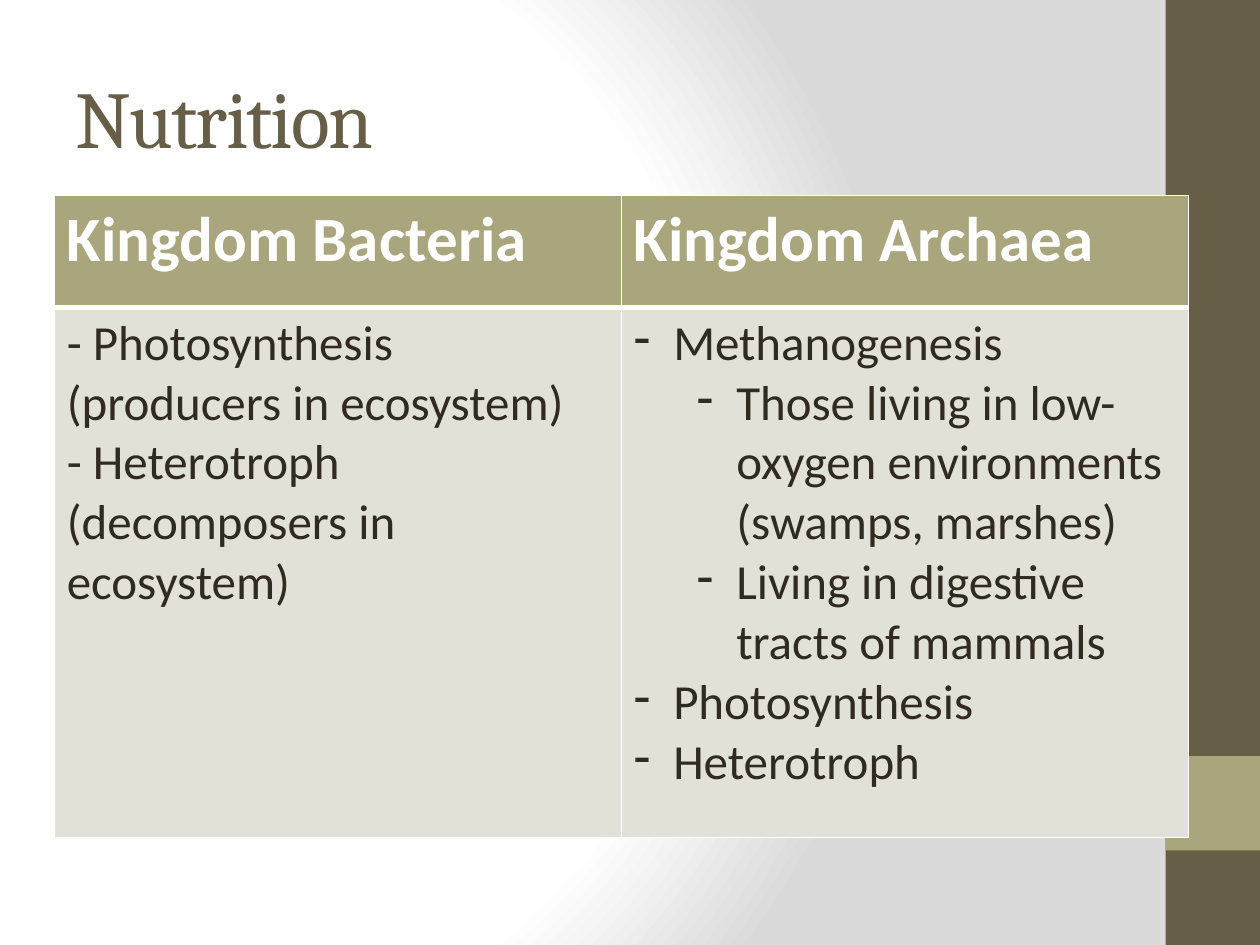
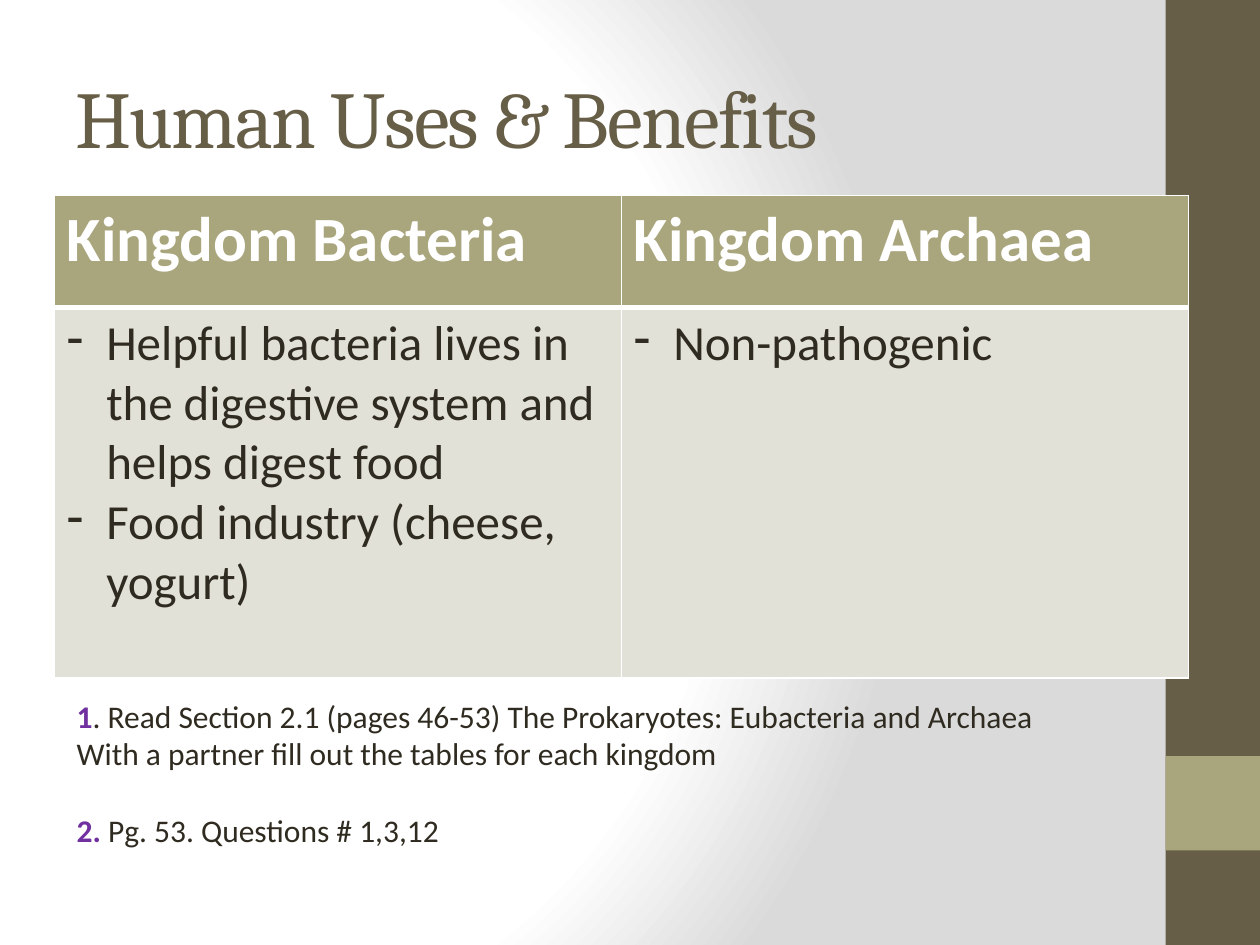
from dataclasses import dataclass

from lxml import etree
from pptx import Presentation
from pptx.dml.color import RGBColor
from pptx.enum.shapes import MSO_SHAPE
from pptx.enum.text import MSO_ANCHOR
from pptx.oxml import parse_xml
from pptx.oxml.ns import nsdecls, qn
from pptx.util import Pt

RECTANGLE = MSO_SHAPE.RECTANGLE
MIDDLE = MSO_ANCHOR.MIDDLE

KINGDOMS = ("Kingdom Bacteria", "Kingdom Archaea")

# Each table entry is (bullet level or None, text).
SLIDES = [
    {
        "title": "Nutrition",
        "body_height": 303,
        "columns": (
            [
                (None, "- Photosynthesis (producers in ecosystem)"),
                (None, "- Heterotroph (decomposers in ecosystem)"),
            ],
            [
                (0, "Methanogenesis"),
                (1, "Those living in low-oxygen environments (swamps, marshes)"),
                (1, "Living in digestive tracts of mammals"),
                (0, "Photosynthesis"),
                (0, "Heterotroph"),
            ],
        ),
        "tasks": [],
    },
    {
        "title": "Human Uses & Benefits",
        "body_height": 212,
        "columns": (
            [
                (0, "Helpful bacteria lives in the digestive system and helps digest food"),
                (0, "Food industry (cheese, yogurt)"),
            ],
            [(0, "Non-pathogenic")],
        ),
        # Each task line is (number, text, space before).
        "tasks": [
            ("1", ". Read Section 2.1 (pages 46-53) The Prokaryotes: Eubacteria and Archaea", 0),
            ("", "With a partner fill out the tables for each kingdom", 0),
            ("2. ", "Pg. 53. Questions # 1,3,12", 22),
        ],
    },
]


@dataclass(frozen=True)
class Theme:
    brown: str = "675E47"
    olive: str = "A9A57C"
    pale: str = "E2E1D7"
    ink: str = "2F2B20"
    white: str = "FFFFFF"
    grey: str = "DADADA"
    purple: str = "7030A0"
    heading_font: str = "Cambria"
    body_font: str = "Calibri"
    title_size: int = 46
    header_size: int = 36
    body_size: int = 28
    task_size: int = 18
    thin: int = 1
    thick: int = 3


THEME = Theme()
PAGE_WIDTH, PAGE_HEIGHT = 720, 540
BAND_WIDTH = 54
ACCENT_TOP = 432
TITLE_BOX = (36, 21.6, 600, 90)
TABLE_LEFT, TABLE_TOP, TABLE_WIDTH = 31, 111.6, 648
HEADER_HEIGHT = 64
TASK_BOX = (36.72, 394.56, 612, 94.32)
HANGING, LEVEL_STEP = 22.5, 36
NO_TABLE_STYLE = "{2D5ABB26-0587-4C30-8999-92F81FD0307C}"


def points(values):
    return [Pt(value) for value in values]


def style_font(font, name, size, color, bold=False):
    font.name, font.size, font.bold = name, Pt(size), bold
    font.color.rgb = RGBColor.from_string(color)


def paint_background(page):
    """Fill the page with a circular gradient, white turning grey at the right."""
    fill = page.background.fill
    fill.solid()
    stops = "".join(
        f'<a:gs pos="{percent * 1000}"><a:srgbClr val="{color}"/></a:gs>'
        for percent, color in ((0, THEME.white), (75, THEME.white), (100, THEME.grey))
    )
    gradient = parse_xml(
        f'<a:gradFill {nsdecls("a")} rotWithShape="1"><a:gsLst>{stops}</a:gsLst>'
        '<a:path path="circle"><a:fillToRect l="20000" t="50000" r="100000" b="50000"/>'
        "</a:path></a:gradFill>"
    )
    solid = page.background._cSld.find(".//" + qn("a:solidFill"))
    solid.getparent().replace(solid, gradient)


def add_band(page, top, height, color):
    left = PAGE_WIDTH - BAND_WIDTH
    band = page.shapes.add_shape(RECTANGLE, *points((left, top, BAND_WIDTH, height)))
    band.shadow.inherit = False
    band.fill.solid()
    band.fill.fore_color.rgb = RGBColor.from_string(color)
    band.line.fill.background()


def add_text_frame(page, place):
    frame = page.shapes.add_textbox(*points(place)).text_frame
    frame.word_wrap = True
    return frame


def add_title(page, title):
    frame = add_text_frame(page, TITLE_BOX)
    frame.vertical_anchor = MIDDLE
    para = frame.paragraphs[0]
    span = para.add_run()
    span.text = title
    span._r.get_or_add_rPr().set("spc", "-100")
    style_font(para.font, THEME.heading_font, THEME.title_size, THEME.brown)


def next_paragraph(frame, index):
    return frame.add_paragraph() if index else frame.paragraphs[0]


def add_dash(para, level):
    properties = para._p.get_or_add_pPr()
    properties.set("marL", str(Pt(HANGING + level * LEVEL_STEP)))
    properties.set("indent", str(-Pt(HANGING)))
    etree.SubElement(properties, qn("a:buFontTx"))
    etree.SubElement(properties, qn("a:buChar")).set("char", "-")


def set_borders(cell, top, bottom):
    properties = cell._tc.get_or_add_tcPr()
    widths = {"lnL": THEME.thin, "lnR": THEME.thin, "lnT": top, "lnB": bottom}
    for side, width in widths.items():
        properties.append(parse_xml(
            f'<a:{side} {nsdecls("a")} w="{Pt(width)}"><a:solidFill>'
            f'<a:srgbClr val="{THEME.white}"/></a:solidFill></a:{side}>'
        ))


def fill_cell(cell, entries, size, color, bold, fill):
    cell.fill.solid()
    cell.fill.fore_color.rgb = RGBColor.from_string(fill)
    for index, (level, text) in enumerate(entries):
        para = next_paragraph(cell.text_frame, index)
        para.text = text
        if level is not None:
            para.level = level
            add_dash(para, level)
        style_font(para.font, THEME.body_font, size, color, bold)


def add_kingdom_table(page, columns, body_height):
    heights = (HEADER_HEIGHT, body_height)
    place = points((TABLE_LEFT, TABLE_TOP, TABLE_WIDTH, sum(heights)))
    table = page.shapes.add_table(len(heights), len(KINGDOMS), *place).table
    table.horz_banding = False
    table._tbl.tblPr.find(qn("a:tableStyleId")).text = NO_TABLE_STYLE
    for row, height in zip(table.rows, heights):
        row.height = Pt(height)
    for number, (kingdom, entries) in enumerate(zip(KINGDOMS, columns)):
        table.columns[number].width = Pt(TABLE_WIDTH / len(KINGDOMS))
        header, body = table.cell(0, number), table.cell(1, number)
        set_borders(header, THEME.thin, THEME.thick)
        set_borders(body, THEME.thick, THEME.thin)
        fill_cell(header, [(None, kingdom)], THEME.header_size, THEME.white, True, THEME.olive)
        fill_cell(body, entries, THEME.body_size, THEME.ink, False, THEME.pale)


def add_tasks(page, tasks):
    frame = add_text_frame(page, TASK_BOX)
    for index, (number, text, space) in enumerate(tasks):
        para = next_paragraph(frame, index)
        if space:
            para.space_before = Pt(space)
        style_font(para.font, THEME.body_font, THEME.task_size, THEME.ink)
        if number:
            span = para.add_run()
            span.text = number
            style_font(span.font, THEME.body_font, THEME.task_size, THEME.purple, True)
        para.add_run().text = text


def main():
    deck = Presentation()
    deck.slide_width, deck.slide_height = points((PAGE_WIDTH, PAGE_HEIGHT))
    blank = deck.slide_layouts[6]
    for content in SLIDES:
        page = deck.slides.add_slide(blank)
        paint_background(page)
        add_band(page, 0, PAGE_HEIGHT, THEME.brown)
        add_band(page, ACCENT_TOP, BAND_WIDTH, THEME.olive)
        add_title(page, content["title"])
        add_kingdom_table(page, content["columns"], content["body_height"])
        if content["tasks"]:
            add_tasks(page, content["tasks"])
    deck.save("out.pptx")


if __name__ == "__main__":
    main()
